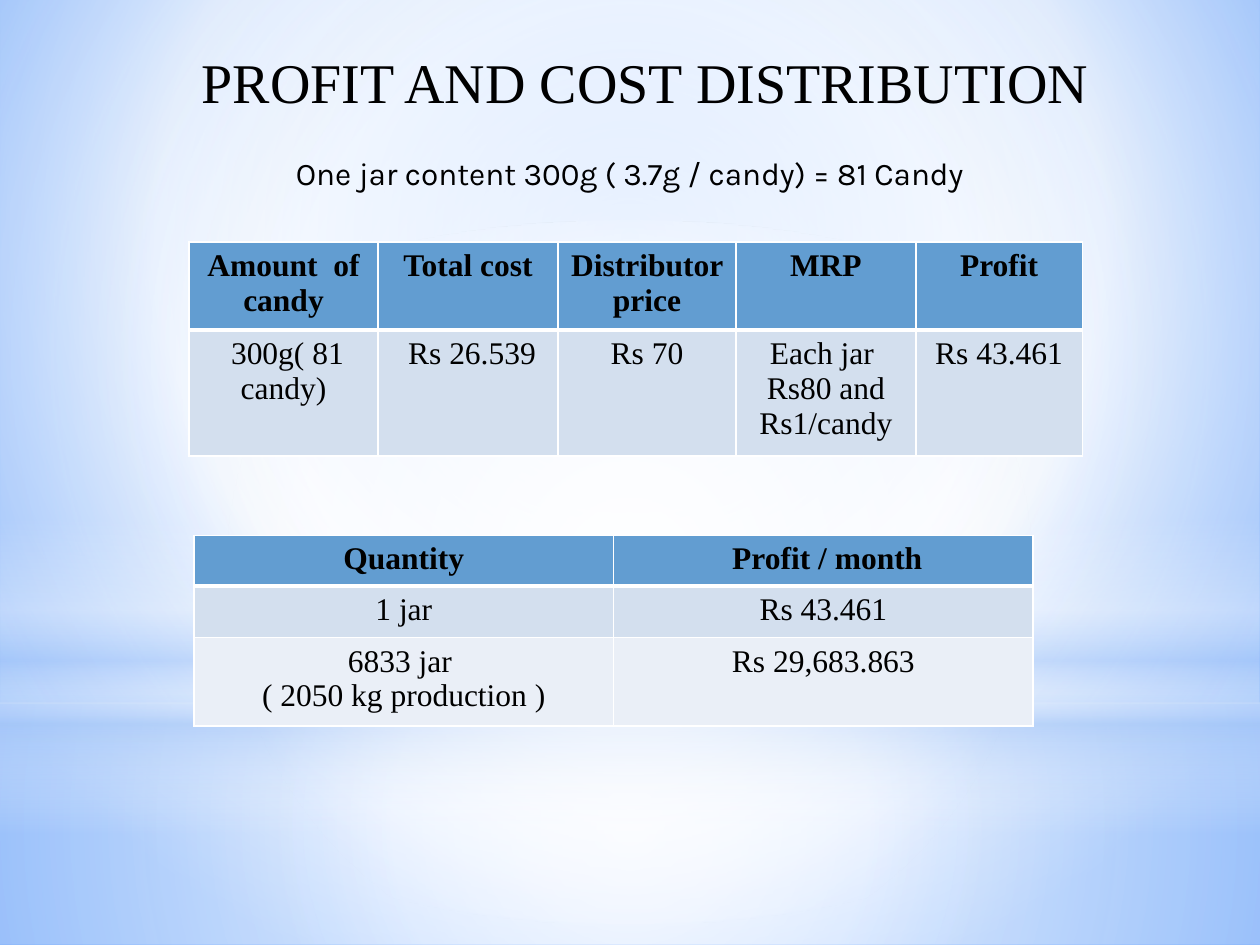
from dataclasses import dataclass

from lxml import etree
from pptx import Presentation
from pptx.dml.color import RGBColor
from pptx.enum import shapes, text
from pptx.oxml import ns
from pptx.util import Inches, Pt


@dataclass(frozen=True)
class Theme:
    serif: str = "Times New Roman"
    sans: str = "Karla"
    title_size: int = 32
    body_size: int = 18
    ink: str = "000000"
    white: str = "FFFFFF"
    glow: str = "ACCBF9"
    sky: str = "95C0FF"
    deep: str = "5599FF"
    header: str = "629DD1"
    bands: tuple = ("D3DFEE", "EAEFF7")
    rule: int = 1
    header_rule: int = 3


T = Theme()
CENTRE = (50, 50, 50, 50)


def sub(parent, tag, **attrs):
    return etree.SubElement(parent, ns.qn(tag), {k: str(v) for k, v in attrs.items()})


def gradient(fill, root, stops, focus=None, angle=0):
    """Fill with (position, colour, opacity) stops, radial when focus is given."""
    fill.gradient()
    grad = next(root.iter(ns.qn("a:gradFill")))
    for child in list(grad):
        grad.remove(child)
    stop_list = sub(grad, "a:gsLst")
    for pos, colour, opacity in stops:
        stop = sub(stop_list, "a:gs", pos=pos * 1000)
        sub(sub(stop, "a:srgbClr", val=colour), "a:alpha", val=opacity * 1000)
    if focus:
        path = sub(grad, "a:path", path="circle")
        sub(path, "a:fillToRect", **{k: v * 1000 for k, v in zip("ltrb", focus)})
    else:
        sub(grad, "a:lin", ang=angle * 60000, scaled=0)


def add_run(p, words, font, size, bold=False):
    r = p.add_run()
    r.text = words
    r.font.name, r.font.size, r.font.bold = font, Pt(size), bold
    r.font.color.rgb = RGBColor.from_string(T.ink)


def place(sp, box):
    sp.left, sp.top, sp.width, sp.height = (Inches(v) for v in box)


def add_backdrop(s, width, height):
    gradient(s.background.fill, s._element,
             [(0, T.sky, 100), (60, T.white, 100), (100, T.deep, 100)], (20, 10, 20, 60))
    horizon = 5.58
    rect, oval = shapes.MSO_SHAPE.RECTANGLE, shapes.MSO_SHAPE.OVAL
    glows = [
        (rect, (0, horizon, width, height - horizon),
         [(0, T.white, 91), (37, T.white, 76), (100, T.glow, 79)], CENTRE),
        (rect, (0, 0, width, horizon),
         [(0, T.white, 89), (48, T.white, 62), (100, T.glow, 79)], CENTRE),
        (rect, (0, 4.12, width, 2.5),
         [(0, T.white, 0), (29, T.white, 30), (45, T.glow, 40),
          (55, T.white, 26), (65, T.glow, 60), (100, T.white, 0)], None),
        (oval, (0, 1.75, width, horizon),
         [(0, T.white, 100), (56, T.white, 0)], CENTRE),
    ]
    for kind, box, stops, focus in glows:
        sp = s.shapes.add_shape(kind, *(Inches(v) for v in box))
        sp.shadow.inherit = False
        sp.line.fill.background()
        gradient(sp.fill, sp._element, stops, focus, angle=90)


def add_title(s, box, words):
    title = s.shapes.title
    s.shapes._spTree.append(title._element)  # bring in front of the backdrop
    place(title, box)
    tf = title.text_frame
    tf.vertical_anchor = text.MSO_ANCHOR.TOP
    tf.margin_top = Inches(0.1)
    p = tf.paragraphs[0]
    p.alignment = text.PP_ALIGN.LEFT
    add_run(p, words, T.serif, T.title_size)


def add_subtitle(s, box, words):
    tf = s.shapes.add_textbox(*(Inches(v) for v in box)).text_frame
    tf.word_wrap = True
    add_run(tf.paragraphs[0], words, T.sans, T.body_size)


def set_borders(cell, **widths):
    tc_pr = cell._tc.get_or_add_tcPr()
    for side in "LRTB":
        line = sub(tc_pr, f"a:ln{side}", w=Pt(widths.get(side, T.rule)))
        sub(sub(line, "a:solidFill"), "a:srgbClr", val=T.white)


def add_grid(s, left, top, col_widths, row_heights, rows):
    """Table with a bold header row, banded body and a thick rule between."""
    frame = s.shapes.add_table(len(rows), len(col_widths), Inches(left), Inches(top),
                               Inches(sum(col_widths)), Inches(sum(row_heights)))
    table = frame.table
    for col, width in zip(table.columns, col_widths):
        col.width = Inches(width)
    for i, (row, height, values) in enumerate(zip(table.rows, row_heights, rows)):
        row.height = Inches(height)
        for cell, value in zip(row.cells, values):
            thick = {0: {"B": T.header_rule}, 1: {"T": T.header_rule}}
            set_borders(cell, **thick.get(i, {}))
            cell.fill.solid()
            colour = T.bands[(i - 1) % 2] if i else T.header
            cell.fill.fore_color.rgb = RGBColor.from_string(colour)
            tf = cell.text_frame
            for n, words in enumerate(value.split("\n")):
                p = tf.add_paragraph() if n else tf.paragraphs[0]
                p.alignment = text.PP_ALIGN.CENTER
                add_run(p, words, T.serif, T.body_size, bold=i == 0)


def main():
    prs = Presentation()
    prs.slide_width, prs.slide_height = Inches(10), Inches(7.5)
    s = prs.slides.add_slide(prs.slide_layouts[5])

    add_backdrop(s, 10, 7.5)
    add_title(s, (1.5, 0.28, 7.67, 1.18), "PROFIT AND COST DISTRIBUTION")
    add_subtitle(s, (2.25, 1.17, 5.75, 0.4),
                 "One jar content 300g ( 3.7g / candy) = 81 Candy")

    # Cost of one jar
    add_grid(s, 1.5, 1.92, [1.5, 1.43, 1.41, 1.43, 1.32], [0.7, 1.0], [
        ["Amount  of candy", "Total cost", "Distributor price", "MRP", "Profit"],
        [" 300g( 81 candy)", " Rs 26.539", "Rs 70",
         "Each jar  Rs80 and Rs1/candy", "Rs 43.461"],
    ])

    # Monthly profit
    add_grid(s, 1.54, 4.25, [3.33] * 2, [0.4, 0.41, 0.7], [
        ["Quantity", " Profit / month"],
        ["1 jar", "Rs 43.461"],
        ["6833 jar \n( 2050 kg production )", "Rs 29,683.863"],
    ])
    prs.save("out.pptx")


if __name__ == "__main__":
    main()
